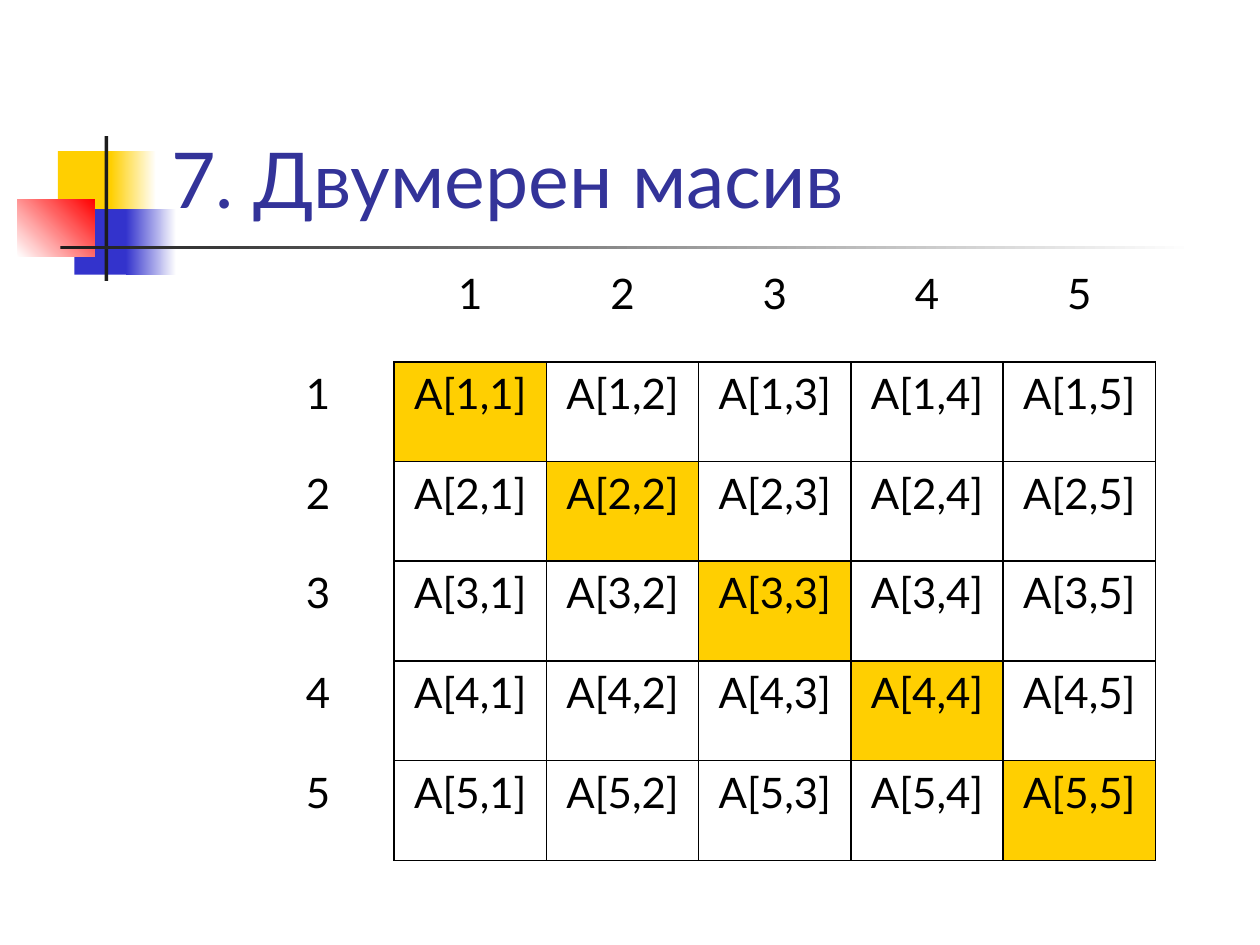
from lxml.etree import SubElement
from pptx import Presentation
from pptx.dml.color import RGBColor
from pptx.enum.shapes import MSO_SHAPE
from pptx.enum.text import MSO_ANCHOR, PP_ALIGN
from pptx.oxml.ns import qn
from pptx.util import Inches, Pt

FONT = "Lato"
GOLD, BLUE, RED = "FFCF01", "3333CC", "FF0000"
INK, WHITE, BLACK, NAVY = "1C1C1C", "FFFFFF", "000000", "333399"
PLAIN = "{2D5ABB26-0587-4C30-8999-92F81FD0307C}"  # table style without grid
SIZE = 5


def rgb(code):
    return RGBColor.from_string(code)


class Page:
    def __init__(self, slide):
        self.slide = slide

    def style(self, para, size, color):
        for run in para.runs:
            run.font.name = FONT
            run.font.size = Pt(size)
            run.font.color.rgb = rgb(color)

    def block(self, box, start, end=None, angle=0):
        """Add a rectangle, solid or fading from start to end."""
        shape = self.slide.shapes.add_shape(
            MSO_SHAPE.RECTANGLE, *map(Inches, box))
        shape.shadow.inherit = False
        shape.line.fill.background()
        if end is None:
            shape.fill.solid()
            shape.fill.fore_color.rgb = rgb(start)
            return
        shape.fill.gradient()
        shape.fill.gradient_angle = angle
        for stop, color in zip(shape.fill.gradient_stops, (start, end)):
            stop.color.rgb = rgb(color)

    def title(self, text, box):
        shape = self.slide.shapes.title
        shape.left, shape.top, shape.width, shape.height = map(Inches, box)
        shape.element.getparent().append(shape.element)  # bring to front
        frame = shape.text_frame
        frame.text = text
        frame.vertical_anchor = MSO_ANCHOR.BOTTOM
        frame.paragraphs[0].alignment = PP_ALIGN.LEFT
        self.style(frame.paragraphs[0], 44, NAVY)

    def border(self, cell, sides):
        props = cell._tc.get_or_add_tcPr()
        for side in sides:
            line = SubElement(props, qn(f"a:ln{side}"), w=str(Pt(1)))
            fill = SubElement(line, qn("a:solidFill"))
            SubElement(fill, qn("a:srgbClr"), val=BLACK)

    def cell(self, cell, text, sides, fill=None):
        self.border(cell, sides)
        if fill:
            cell.fill.solid()
            cell.fill.fore_color.rgb = rgb(fill)
        else:
            cell.fill.background()
        para = cell.text_frame.paragraphs[0]
        para.text = text
        para.alignment = PP_ALIGN.CENTER
        gap = SubElement(para._p.get_or_add_pPr(), qn("a:spcBef"))
        SubElement(gap, qn("a:spcPct"), val="20000")
        self.style(para, 24, BLACK)

    def matrix(self, count, box):
        """Add a grid of A[row,col] with numbered edges and a gold diagonal."""
        frame = self.slide.shapes.add_table(
            count + 1, count + 1, *map(Inches, box))
        table = frame.table
        table.first_row = table.horz_banding = False
        next(frame.element.iter(qn("a:tableStyleId"))).text = PLAIN
        for row in range(count + 1):
            for col in range(count + 1):
                if row and col:
                    text, sides = f"A[{row},{col}]", "LRTB"
                elif row:
                    text, sides = str(row), "R"
                elif col:
                    text, sides = str(col), "B"
                else:
                    text, sides = "", ""
                fill = GOLD if row and row == col else None
                self.cell(table.cell(row, col), text, sides, fill)


def main():
    deck = Presentation()
    deck.slide_width, deck.slide_height = Inches(10), Inches(7.5)
    page = Page(deck.slides.add_slide(deck.slide_layouts[5]))

    # Corner ornament
    page.block((0.46, 1.2, 0.48, 0.52), GOLD)
    page.block((0.88, 1.2, 0.36, 0.52), GOLD, WHITE)
    page.block((0.59, 1.66, 0.46, 0.52), BLUE)
    page.block((1, 1.66, 0.4, 0.52), BLUE, WHITE)
    page.block((0.14, 1.58, 0.61, 0.46), WHITE, RED, 45)
    page.block((0.83, 1.08, 0.03, 1.15), INK)
    page.block((0.48, 1.95, 9, 0.03), INK, WHITE)

    # Title and matrix
    page.title("7. Двумерен масив", (1.26, 0.23, 8.52, 1.6))
    page.matrix(SIZE, (1.92, 2.08, 7.25, 4.75))

    deck.save("out.pptx")


if __name__ == "__main__":
    main()
